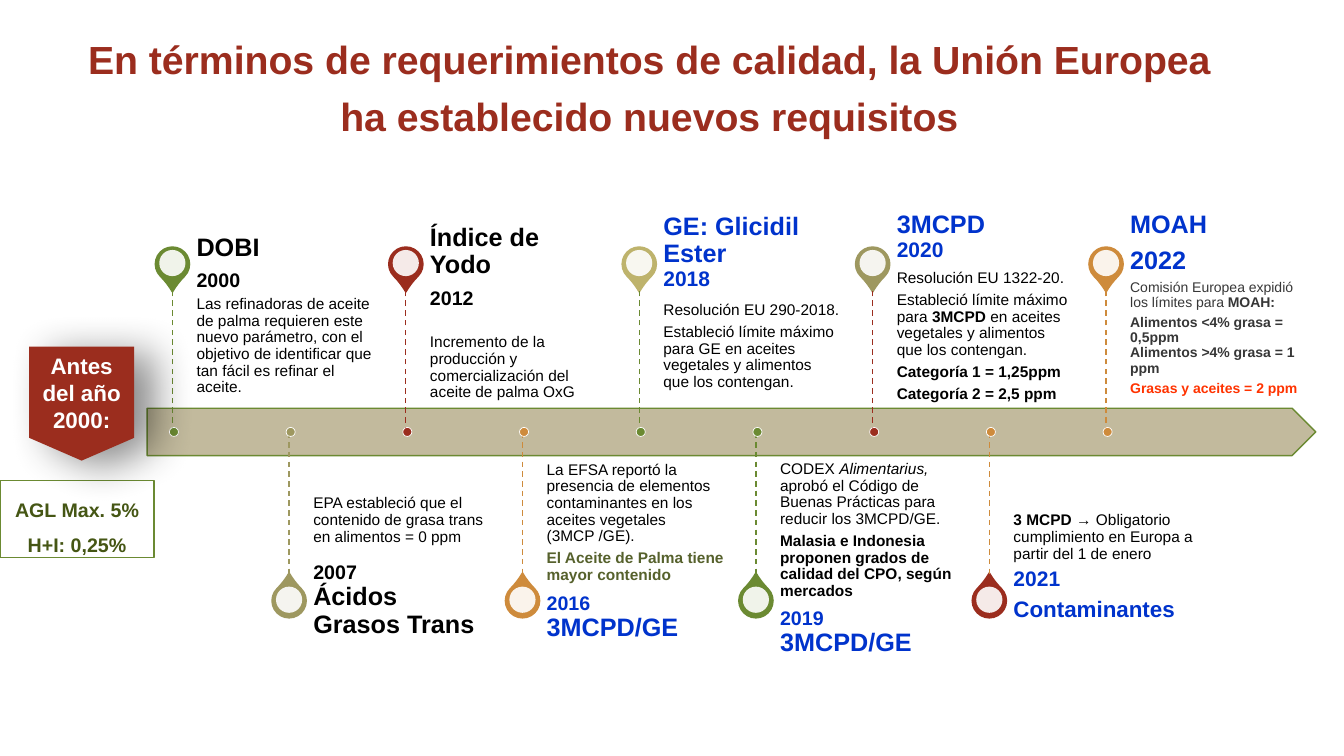
"""Builds a timeline slide of European quality requirements for palm oil."""
from copy import deepcopy
from lxml.etree import SubElement
from pptx import Presentation
from pptx.dml.color import RGBColor as Rgb
from pptx.enum.dml import MSO_LINE as Dash
from pptx.enum.shapes import MSO_CONNECTOR as Conn, MSO_SHAPE as Kind
from pptx.enum.text import MSO_ANCHOR as Anchor, MSO_AUTO_SIZE as Auto, PP_ALIGN as Align
from pptx.oxml.ns import qn
from pptx.util import Inches, Pt

HUES = {
    "green": "6B8A32", "olive": "9E9860", "red": "9B2D1E", "amber": "CE8B3C",
    "straw": "BEB36C", "sand": "BCB393", "white": "FFFFFF", "black": "000000",
    "blue": "0033CC", "moss": "56612C", "leaf": "455614", "gray": "373737",
    "flame": "FF3300",
}
STYLES = {
    "note": (11, "black", False, False), "bold": (11, "black", True, False),
    "slant": (11, "black", False, True), "moss": (11, "moss", True, False),
    "gray": (10, "gray", False, False), "dark": (10, "gray", True, False),
    "flame": (10, "flame", True, False), "name": (18, "black", True, False),
    "year": (14, "black", True, False), "bname": (18, "blue", True, False),
    "bmid": (16, "blue", True, False), "byear": (15, "blue", True, False),
    "bsmall": (14, "blue", True, False), "title": (28, "red", True, False),
    "tag": (16, "white", True, False), "limit": (14, "leaf", True, False),
}
UP = (0, 0.08, 0.08, 0.11)
DOWN = (0, 0.11, 0, 0.08)
TOP, MID, LOW = Anchor.TOP, Anchor.MIDDLE, Anchor.BOTTOM

EVENTS = [
    dict(pin="green", line="green", head=(2.36, 0.5), note=(2.86, 1.42), pad=UP, anchor=TOP,
         title=[[("DOBI", "name")], [("2000", "year")]],
         text=[[("Las refinadoras de aceite de palma requieren este nuevo parámetro, con el "
                 "objetivo de identificar que tan fácil es refinar el aceite.", "note")]]),
    dict(pin="olive", line="olive", head=(5.71, 0.5), note=(4.29, 1.42),
         pad=(0, 0.11, 0, 0.3), anchor=LOW,
         title=[[("2007\n", "year"), ("Ácidos Grasos Trans", "name")]],
         text=[[("EPA estableció que el contenido de grasa trans en alimentos = 0 ppm", "note")]]),
    dict(pin="red", line="red", head=(2.52, 0.26), note=(3.24, 0.73), pad=UP, anchor=TOP,
         title=[[("Índice de Yodo", "name")], [("2012", "year")]],
         text=[[("Incremento de la producción y comercialización del aceite de palma OxG",
                 "note")]]),
    dict(pin="amber", line="amber", head=(5.88, 0.5), note=(4.45, 1.42), pad=DOWN, anchor=LOW,
         title=[[("2016\n", "bsmall"), ("3MCPD/GE", "bname")]],
         text=[[("La EFSA reportó la presencia de elementos contaminantes en los aceites "
                 "vegetales (3MCP /GE).", "note")],
               [("El Aceite de Palma tiene mayor contenido", "moss")]]),
    dict(pin="straw", line="green", head=(2.31, 0.38), note=(2.92, 1.07), pad=UP, anchor=TOP,
         title=[[("GE: Glicidil Ester\n", "bname"), ("2018", "byear")]],
         text=[[("Resolución EU 290-2018.", "note")],
               [("Estableció límite máximo para GE en aceites vegetales y alimentos que los "
                 "contengan.", "note")]]),
    dict(pin="green", line="green", head=(6.03, 0.5), note=(4.61, 1.42), pad=DOWN, anchor=LOW,
         title=[[("2019\n", "bsmall"), ("3MCPD/GE", "bname")]],
         text=[[("CODEX ", "note"), ("Alimentarius,", "slant"),
                (" aprobó el Código de Buenas Prácticas para reducir los 3MCPD/GE.", "note")],
               [("Malasia e Indonesia proponen grados de calidad del CPO, según mercados",
                 "bold")]]),
    dict(pin="olive", line="red", head=(2.1, 0.5), note=(2.6, 1.42), pad=UP, anchor=TOP,
         title=[[("3MCPD\n", "bname"), ("2020", "byear")]],
         text=[[("Resolución EU 1322-20.", "note")],
               [("Estableció límite máximo para ", "note"), ("3MCPD", "bold"),
                (" en aceites vegetales y alimentos que los contengan.", "note")],
               [("Categoría 1 = 1,25ppm", "bold")], [("Categoría 2 = 2,5 ppm", "bold")]]),
    dict(pin="red", line="amber", head=(5.66, 0.5), note=(4.24, 1.42), pad=DOWN, anchor=LOW,
         title=[[("2021", "byear")], [("Contaminantes", "bmid")]],
         text=[[("3 MCPD → ", "bold"),
                ("Obligatorio cumplimiento en Europa a partir del 1 de enero", "note")]]),
    dict(pin="amber", line="amber", head=(2.16, 0.5), note=(2.66, 1.42),
         pad=(0, 0.07, 0.07, 0.1), anchor=MID,
         title=[[("MOAH", "bname")], [("2022", "bname")]],
         text=[[("Comisión Europea expidió los límites para ", "gray"), ("MOAH:", "dark")],
               [("Alimentos <4% grasa = 0,5ppm\n", "dark"),
                ("Alimentos >4% grasa = 1 ppm", "dark")],
               [("Grasas y aceites = 2 ppm", "flame")]]),
]
TITLE = [[("En términos de requerimientos de calidad, la Unión Europea ha establecido nuevos "
           "requisitos", "title")]]
LIMITS = [[("AGL Max. 5%", "limit")], [("H+I: 0,25%", "limit")]]
BEFORE = [[("Antes del año 2000:", "tag")]]
FIRST, SPAN, AXIS = 1.71, 9.26, 4.29

deck = Presentation()
deck.slide_width, deck.slide_height = Inches(13.33), Inches(7.5)
slide = deck.slides.add_slide(deck.slide_layouts[6])


def put(obj, **vals):
    for key, val in vals.items():
        setattr(obj, key, val)


def tint(name):
    return Rgb.from_string(HUES[name])


def shape(kind, box, fill, line=None, width=1, alpha=None):
    item = slide.shapes.add_shape(kind, *map(Inches, box))
    item.shadow.inherit = False
    item.fill.solid()
    item.fill.fore_color.rgb = tint(fill)
    if alpha:
        clr = item._element.spPr.find(qn("a:solidFill"))[0]
        SubElement(clr, qn("a:alpha"), val=str(alpha * 1000))
    if line:
        item.line.color.rgb = tint(line)
        item.line.width = Pt(width)
    else:
        item.line.fill.background()
    return item


def write(item, paras, anchor=TOP, pad=(0.1, 0.05, 0.1, 0.05), gap=None,
          auto=Auto.NONE, **form):
    frame = item.text_frame
    sides = ("margin_left", "margin_top", "margin_right", "margin_bottom")
    put(frame, word_wrap=True, auto_size=auto, vertical_anchor=anchor,
        **dict(zip(sides, map(Inches, pad))))
    for i, runs in enumerate(paras):
        para = frame.add_paragraph() if i else frame.paragraphs[0]
        put(para, **form)
        if gap:
            para.space_after = Pt(0)
            after = para._p.pPr.find(qn("a:spcAft"))
            after.remove(after[0])
            SubElement(after, qn("a:spcPct"), val=str(gap * 1000))
        for text, style in runs:
            size, hue, bold, slant = STYLES[style]
            run = para.add_run()
            run.text = text.rstrip("\n")
            put(run.font, name="Arial", size=Pt(size), bold=bold, italic=slant)
            run.font.color.rgb = tint(hue)
            if text.endswith("\n"):
                para.add_line_break()
                para._p.findall(qn("a:br"))[-1].insert(0, deepcopy(run._r.rPr))


def label(box, paras, **form):
    write(slide.shapes.add_textbox(*map(Inches, box)), paras, **form)


def stem(x, end, hue):
    line = slide.shapes.add_connector(Conn.STRAIGHT, *map(Inches, (x, AXIS, x, end)))
    put(line.line, width=Pt(1), dash_style=Dash.DASH)
    line.line.color.rgb = tint(hue)
    SubElement(line._element.spPr, qn("a:effectLst"))


def event(i, item):
    x = FIRST + i * SPAN / (len(EVENTS) - 1)
    turn, top, end, right = (315, 5.79, 5.71, 0.1) if i % 2 else (135, 2.45, 2.86, 0.12)
    pin = shape(Kind.TEAR, (x - 0.17, top, 0.34, 0.34), item["pin"], item["pin"])
    pin.adjustments[0] = 1.15
    pin.rotation = turn
    shape(Kind.OVAL, (x - 0.13, top + 0.03, 0.26, 0.26), "white", alpha=90)
    form = dict(gap=35, line_spacing=0.9)
    for part, key, anchor, pad in (("note", "text", item["anchor"], item["pad"]),
                                   ("head", "title", MID, (0, 0, right, 0))):
        y, high = item[part]
        label((x + 0.24, y, 1.84, high), item[key], anchor=anchor, pad=pad, **form)
    stem(x, end, item["line"])
    shape(Kind.OVAL, (x - 0.03, AXIS - 0.05, 0.09, 0.09), item["line"], "white", 0.5)


shape(Kind.PENTAGON, (1.46, 4.05, 11.59, 0.47), "sand", "green", alpha=90)
for i, item in enumerate(EVENTS):
    event(i, item)

limit = shape(Kind.RECTANGLE, (0, 4.77, 1.53, 0.76), "white", "green")
write(limit, LIMITS, auto=Auto.SHAPE_TO_FIT_TEXT, alignment=Align.CENTER, line_spacing=1.5)

tag = shape(Kind.FLOWCHART_OFFPAGE_CONNECTOR, (0.29, 3.44, 1.04, 1.13), "red")
write(tag, BEFORE, anchor=MID, auto=Auto.SHAPE_TO_FIT_TEXT, alignment=Align.CENTER)
cast = SubElement(tag._element.spPr.find(qn("a:effectLst")), qn("a:outerShdw"),
                  blurRad=str(Pt(30)), dist=str(Pt(15)), dir=str(18 * 60000),
                  algn="ctr", rotWithShape="0")
SubElement(SubElement(cast, qn("a:srgbClr"), val=HUES["black"]), qn("a:alpha"), val="45000")

label((0.69, 0.21, 11.5, 1.39), TITLE, alignment=Align.CENTER, line_spacing=1.2)
deck.save("out.pptx")
